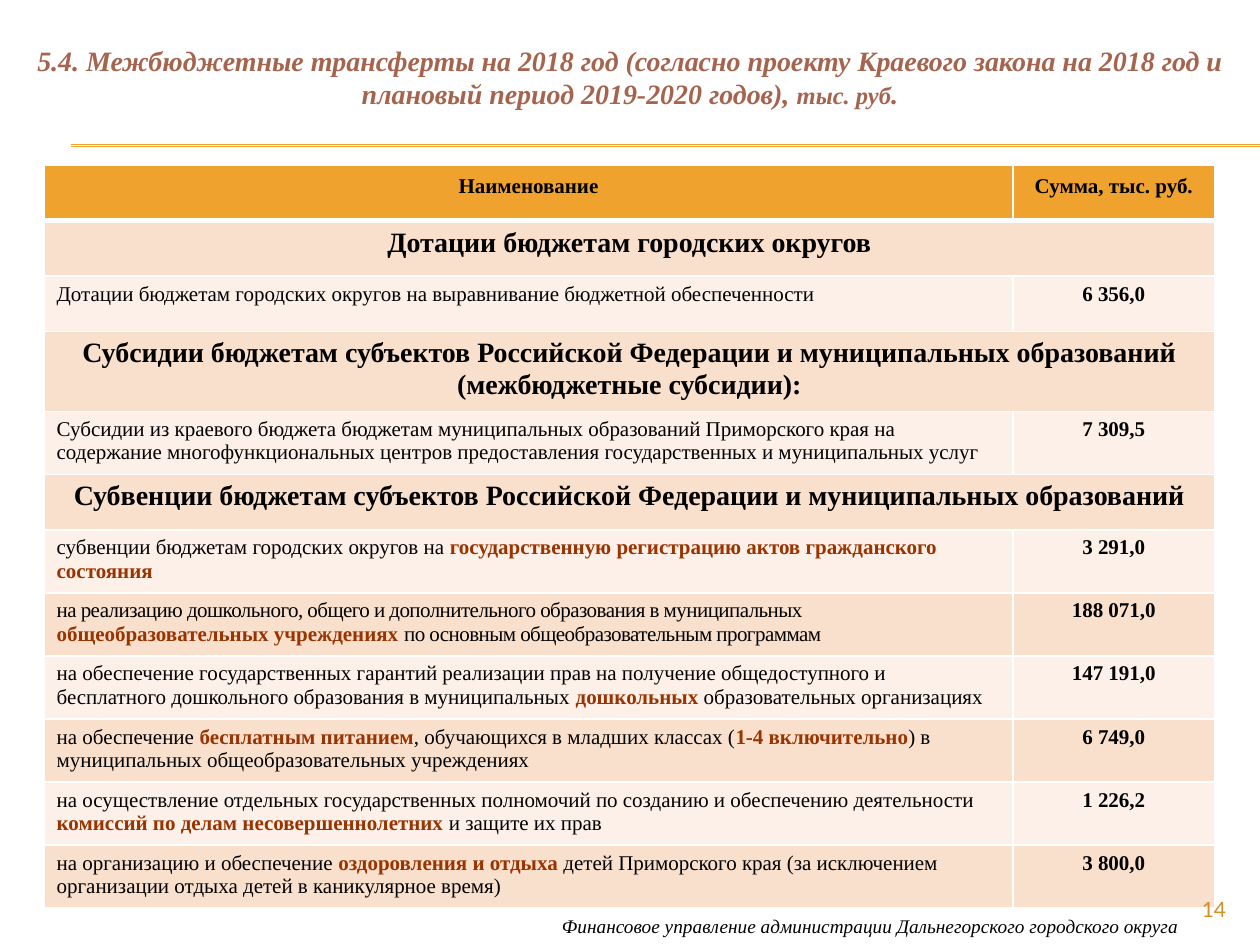
from lxml.etree import SubElement
from pptx import Presentation
from pptx.dml.color import RGBColor
from pptx.enum.shapes import MSO_CONNECTOR
from pptx.enum.text import MSO_ANCHOR, PP_ALIGN
from pptx.oxml.ns import qn
from pptx.util import Inches, Pt

WIDTH, HEIGHT = Inches(10), Inches(7.5)
SERIF, SANS = "Times New Roman", "Lato"
COLORS = {
    "text": "000000", "title": "A5644E", "accent": "993300", "gold": "F0A22E",
    "number": "D48F29", "dark_band": "F9E0CD", "light_band": "FCF0E8",
    "border": "FFFFFF",
}
COLUMN_SHARES = (0.769, 0.16)
ROW_HEIGHTS = {"header": 0.44, "section": 0.44, "long_section": 0.63,
               "short": 0.44, "item": 0.5}  # inches

# Each row: kind, runs (every second run is emphasised), amount
TRANSFERS = [
    ("header", ["Наименование"], "Сумма, тыс. руб."),
    ("section", ["Дотации бюджетам городских округов"], None),
    ("short", ["Дотации бюджетам городских округов на выравнивание бюджетной "
               "обеспеченности"], "6 356,0"),
    ("long_section", ["Субсидии бюджетам субъектов Российской Федерации и муниципальных "
                      "образований (межбюджетные субсидии):"], None),
    ("item", ["Субсидии из краевого бюджета бюджетам муниципальных образований "
              "Приморского края на содержание многофункциональных центров "
              "предоставления государственных и муниципальных услуг"], "7 309,5"),
    ("section", ["Субвенции бюджетам субъектов Российской Федерации и муниципальных "
                 "образований"], None),
    ("item", ["субвенции бюджетам городских округов на ",
              "государственную регистрацию актов гражданского состояния"], "3 291,0"),
    ("item", ["на реализацию дошкольного, общего и дополнительного образования в "
              "муниципальных ", "общеобразовательных учреждениях ",
              "по основным общеобразовательным программам"], "188 071,0"),
    ("item", ["на обеспечение государственных гарантий реализации прав на получение "
              "общедоступного и бесплатного дошкольного образования в муниципальных ",
              "дошкольных", " образовательных организациях"], "147 191,0"),
    ("item", ["на обеспечение ", "бесплатным питанием",
              ", обучающихся в младших классах (", "1-4 включительно",
              ") в муниципальных общеобразовательных учреждениях"], "6 749,0"),
    ("item", ["на осуществление отдельных государственных полномочий по созданию и "
              "обеспечению деятельности ", "комиссий по делам несовершеннолетних ",
              "и защите их прав"], "1 226,2"),
    ("item", ["на организацию и обеспечение ", "оздоровления и отдыха ",
              "детей Приморского края (за исключением организации отдыха детей в "
              "каникулярное время)"], "3 800,0"),
]
TIGHT_ROW = 7  # its plain runs are condensed by 0.3 pt


def share(x, y):
    return int(WIDTH * x), int(HEIGHT * y)


def add_run(paragraph, text, size, color="text", bold=False, italic=False, font=SERIF):
    run = paragraph.add_run()
    run.text = text
    run.font.name, run.font.size = font, Pt(size)
    run.font.bold, run.font.italic = bold, italic
    run.font.color.rgb = RGBColor.from_string(COLORS[color])
    return run


def add_text_frame(slide, box, align):
    left, top, width, height = box
    frame = slide.shapes.add_textbox(*share(left, top), *share(width, height)).text_frame
    frame.word_wrap = True
    frame.paragraphs[0].alignment = align
    return frame


def add_rule(slide, left, right, y, color, weight):
    rule = slide.shapes.add_connector(
        MSO_CONNECTOR.STRAIGHT, *share(left, y), *share(right, y))
    rule.line.color.rgb = RGBColor.from_string(COLORS[color])
    rule.line.width = Pt(weight)
    SubElement(rule._element.spPr, qn("a:effectLst"))


def add_title(slide, box):
    heading = add_text_frame(slide, box, PP_ALIGN.CENTER).paragraphs[0]
    for text, size in (
        ("5.4. Межбюджетные трансферты на 2018 год (согласно проекту Краевого закона "
         "на 2018 год и плановый период 2019-2020 годов), ", 16),
        ("тыс. руб", 14),
        (".", 16),
    ):
        add_run(heading, text, size, "title", bold=True, italic=True)


def add_footer(slide, box):
    department = add_text_frame(slide, box, PP_ALIGN.LEFT)
    department.margin_left, department.margin_right = int(WIDTH * 0.04), 0
    add_run(department.paragraphs[0],
            "Финансовое управление администрации Дальнегорского городского округа",
            11, italic=True)


def add_page_number(slide, box):
    number = add_text_frame(slide, box, PP_ALIGN.RIGHT)
    number.vertical_anchor = MSO_ANCHOR.MIDDLE
    add_run(number.paragraphs[0], "14", 12, "number", font=SANS)


def style_cell(cell, fill, bottom_weight):
    properties = cell._tc.get_or_add_tcPr()
    for side, weight in (("L", 1), ("R", 1), ("T", 1), ("B", bottom_weight)):
        border = SubElement(properties, qn(f"a:ln{side}"), w=str(Pt(weight)))
        SubElement(SubElement(border, qn("a:solidFill")), qn("a:srgbClr"),
                   val=COLORS["border"])
    cell.fill.solid()
    cell.fill.fore_color.rgb = RGBColor.from_string(COLORS[fill])


def add_transfers(slide, left, top):
    height = Inches(sum(ROW_HEIGHTS[kind] for kind, _, _ in TRANSFERS))
    table = slide.shapes.add_table(
        len(TRANSFERS), len(COLUMN_SHARES), *share(left, top),
        int(WIDTH * sum(COLUMN_SHARES)), height).table
    table.first_row = table.horz_banding = False
    for column, width in zip(table.columns, COLUMN_SHARES):
        column.width = int(WIDTH * width)

    for index, (kind, texts, amount) in enumerate(TRANSFERS):
        table.rows[index].height = Inches(ROW_HEIGHTS[kind])
        name_cell, amount_cell = table.cell(index, 0), table.cell(index, 1)
        header, section = kind == "header", amount is None
        band = "gold" if header else ("light_band", "dark_band")[index % 2]
        for cell in (name_cell, amount_cell):
            style_cell(cell, band, 3 if header else 1)

        # Name
        name = name_cell.text_frame.paragraphs[0]
        name.alignment = PP_ALIGN.CENTER if header or section else PP_ALIGN.LEFT
        for position, text in enumerate(texts):
            emphasised = position % 2 == 1
            run = add_run(name, text, 16 if section else 12,
                          "accent" if emphasised else "text",
                          bold=header or section or emphasised)
            if index == TIGHT_ROW and not emphasised:
                run.font._element.set("spc", "-30")

        # Amount, or a section heading across both columns
        if section:
            name_cell.merge(amount_cell)
            continue
        value = amount_cell.text_frame.paragraphs[0]
        value.alignment = PP_ALIGN.CENTER
        add_run(value, amount, 12, bold=True)
        if header:
            name.line_spacing = value.line_spacing = 1.15


def main():
    deck = Presentation()
    deck.slide_width, deck.slide_height = WIDTH, HEIGHT
    slide = deck.slides.add_slide(deck.slide_layouts[6])

    # Rules under the title and above the footer
    for y in (0.153, 0.155):
        add_rule(slide, 0.056, 1, y, "gold", 0.75)
    add_rule(slide, 0.043, 0.941, 0.961, "accent", 0.79)

    add_footer(slide, (0.406, 0.961, 0.543, 0.039))
    add_title(slide, (0, 0.039, 1, 0.085))
    add_transfers(slide, 0.035, 0.175)
    add_page_number(slide, (0.9, 0.944, 0.083, 0.036))
    deck.save("out.pptx")


if __name__ == "__main__":
    main()
